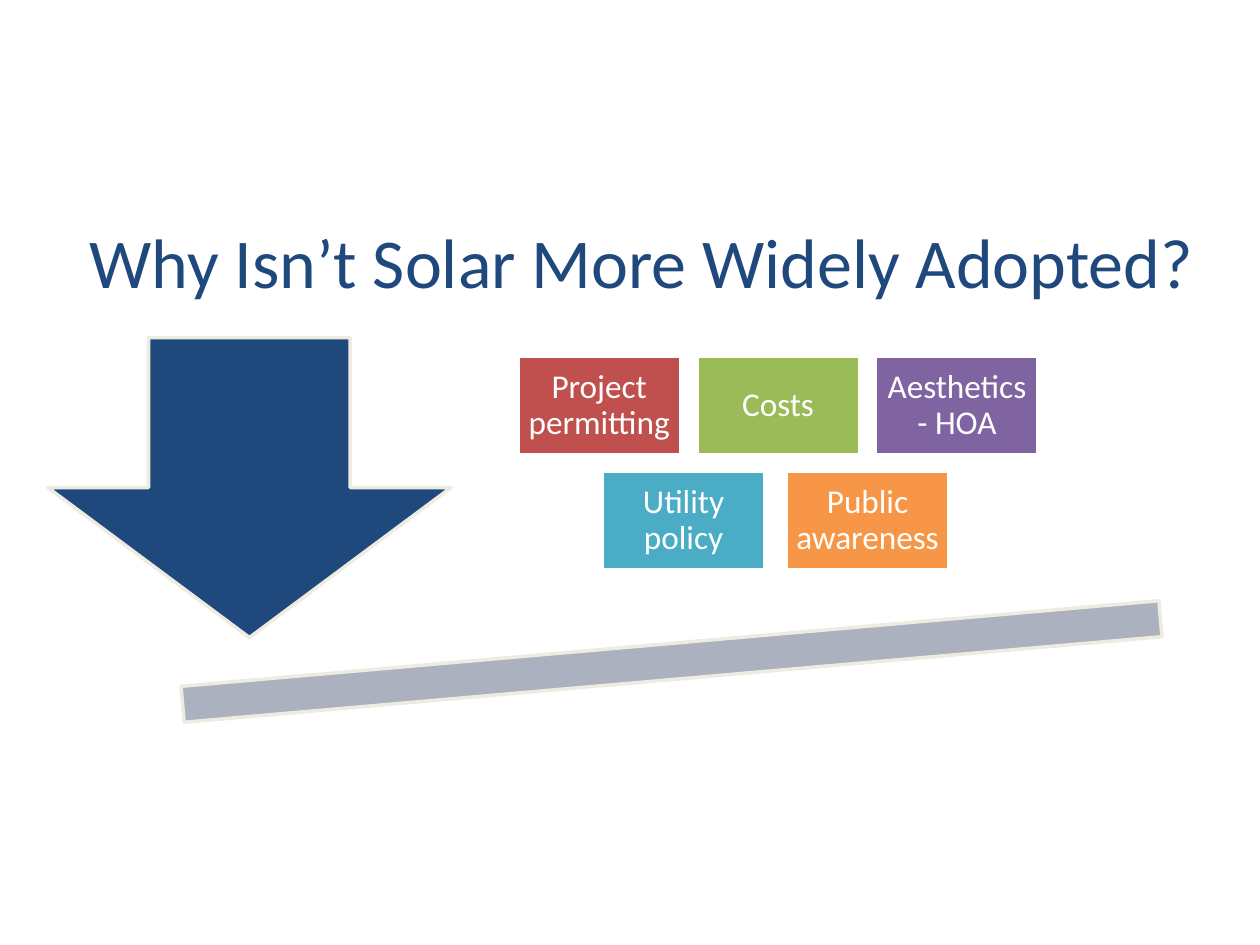
from dataclasses import dataclass

from pptx import Presentation
from pptx import util as u
from pptx.dml import color
from pptx.enum import shapes, text


@dataclass(frozen=True)
class Theme:
    """Colours, font and type sizes of the slide."""
    font: str = "Calibri"
    navy: str = "1F497D"
    gray: str = "ACB1BF"
    cream: str = "EEECE1"
    white: str = "FFFFFF"
    title_size: int = 40
    tile_size: int = 19
    line_width: int = 2


THEME = Theme()
TILE_WIDTH, TILE_HEIGHT = 1.29, 0.78
TILE_ROWS = [
    (0, 0, 1.42, [("Project permitting", "C0504D"), ("Costs", "9BBB59"),
                  ("Aesthetics - HOA", "8064A2")]),
    (0.67, 0.91, 1.46, [("Utility policy", "4BACC6"),
                        ("Public awareness", "F79646")]),
]


def write_text(shape, wording, size, colour):
    """Put one centred paragraph in the middle of a shape and return it."""
    frame = shape.text_frame
    frame.word_wrap = True
    frame.vertical_anchor = text.MSO_ANCHOR.MIDDLE
    paragraph = frame.paragraphs[0]
    paragraph.text = wording
    paragraph.alignment = text.PP_ALIGN.CENTER
    paragraph.font.name = THEME.font
    paragraph.font.size = u.Pt(size)
    paragraph.font.color.rgb = color.RGBColor.from_string(colour)
    return paragraph


def add_block(slide, preset, box, fill, line):
    """Add a filled and outlined preset shape in the given box."""
    shape = slide.shapes.add_shape(preset, *map(u.Inches, box))
    shape.shadow.inherit = False
    shape.fill.solid()
    shape.fill.fore_color.rgb = color.RGBColor.from_string(fill)
    shape.line.color.rgb = color.RGBColor.from_string(line)
    shape.line.width = u.Pt(THEME.line_width)
    return shape


def add_title(slide, box):
    """Add the slide title."""
    title = slide.shapes.add_textbox(*map(u.Inches, box))
    write_text(title, "Why Isn’t Solar More Widely Adopted?",
               THEME.title_size, THEME.navy)


def add_seesaw(slide, arrow_box, beam_box):
    """Add the arrow that presses down on the tilted beam."""
    add_block(slide, shapes.MSO_SHAPE.DOWN_ARROW, arrow_box, THEME.navy, THEME.cream)
    beam = add_block(slide, shapes.MSO_SHAPE.MATH_MINUS, beam_box,
                     THEME.gray, THEME.cream)
    beam.rotation = 355


def add_tile(slide, box, label, fill):
    """Add one labelled barrier tile."""
    tile = add_block(slide, shapes.MSO_SHAPE.RECTANGLE, box, fill, THEME.white)
    paragraph = write_text(tile, label, THEME.tile_size, THEME.white)
    paragraph.line_spacing = 0.9
    frame = tile.text_frame
    frame.margin_left = frame.margin_right = u.Inches(0.07)
    frame.margin_top = frame.margin_bottom = u.Inches(0.08)


def add_barriers(slide, left, top):
    """Lay out the rows of barrier tiles from the given corner."""
    for indent, drop, pitch, tiles in TILE_ROWS:
        for column, (label, fill) in enumerate(tiles):
            box = (left + indent + column * pitch, top + drop,
                   TILE_WIDTH, TILE_HEIGHT)
            add_tile(slide, box, label, fill)


def main():
    """Build the slide and save it."""
    presentation = Presentation()
    presentation.slide_width = u.Inches(10)
    presentation.slide_height = u.Inches(7.5)
    slide = presentation.slides.add_slide(presentation.slide_layouts[6])
    add_title(slide, (0.35, 1.26, 9.48, 1.61))
    add_seesaw(slide, (0.38, 2.68, 3.2, 2.38), (0.03, 4.64, 10.6, 1.22))
    add_barriers(slide, 4.11, 2.83)
    presentation.save("out.pptx")


if __name__ == "__main__":
    main()
